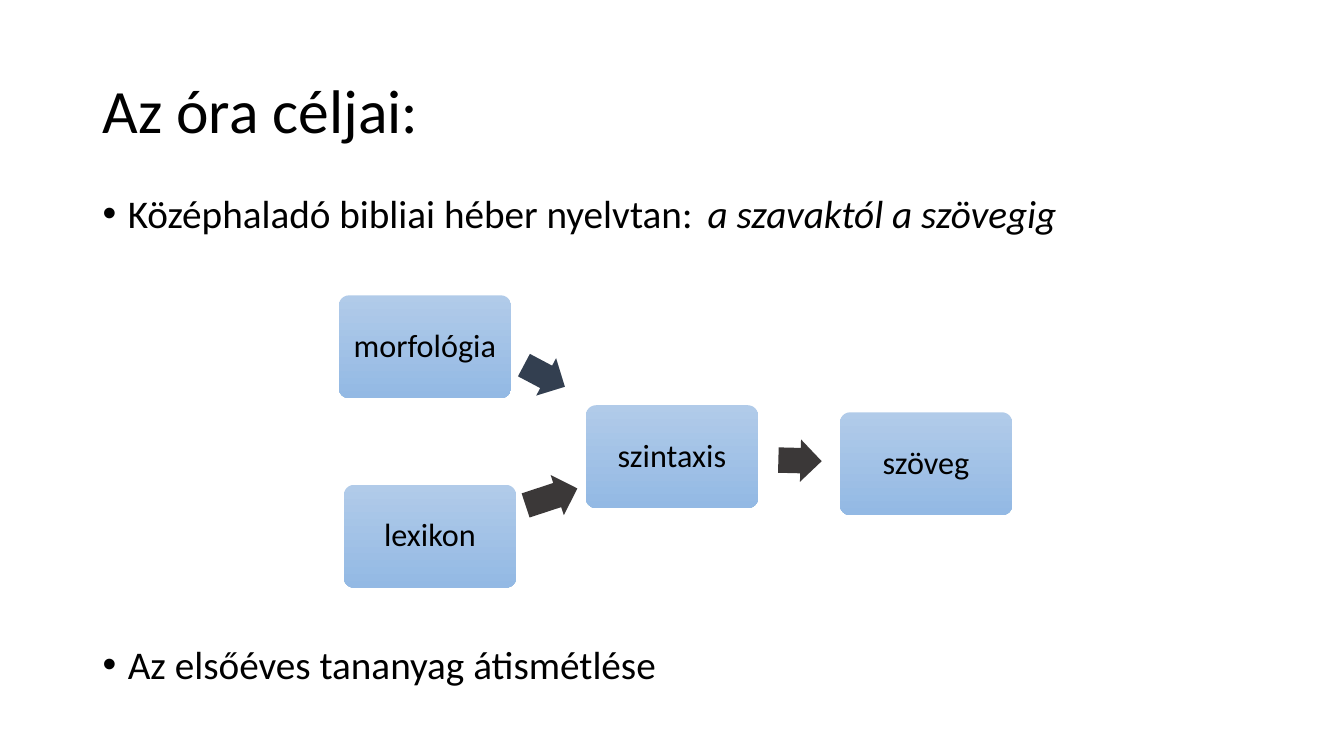
"""Build the slide on the aims of the Hebrew grammar course."""
import pptx
import pptx.dml.color
import pptx.enum.shapes
import pptx.enum.text
import pptx.oxml
import pptx.oxml.ns
import pptx.util

Inches = pptx.util.Inches
Pt = pptx.util.Pt
SHAPES = pptx.enum.shapes.MSO_SHAPE
ALIGN = pptx.enum.text.PP_ALIGN
MIDDLE = pptx.enum.text.MSO_ANCHOR.MIDDLE

BLACK = pptx.dml.color.RGBColor(0x00, 0x00, 0x00)
LIGHT_BLUE = pptx.dml.color.RGBColor(0xB1, 0xCB, 0xE9)
MID_BLUE = pptx.dml.color.RGBColor(0x93, 0xB9, 0xE4)
SLATE = pptx.dml.color.RGBColor(0x33, 0x3F, 0x50)
CHARCOAL = pptx.dml.color.RGBColor(0x3B, 0x38, 0x38)


def add_span(para, text, size, italic=False):
    span = para.add_run()
    span.text = text
    span.font.color.rgb = BLACK
    formats = {"name": "Calibri", "size": Pt(size), "italic": italic}
    for name, value in formats.items():
        setattr(span.font, name, value)


def add_preset(preset, left, top, width, height):
    shape = slide.shapes.add_shape(
        preset, Inches(left), Inches(top), Inches(width), Inches(height))
    shape.shadow.inherit = False
    shape.line.fill.background()
    return shape


deck = pptx.Presentation()
deck.slide_width = Inches(13.33)
deck.slide_height = Inches(7.5)
slide = deck.slides.add_slide(deck.slide_layouts[6])

title = slide.shapes.add_textbox(Inches(0.92), Inches(0.4), Inches(11.5), Inches(1.45))
title.text_frame.word_wrap = True
title.text_frame.vertical_anchor = MIDDLE
title_para = title.text_frame.paragraphs[0]
title_para.line_spacing = 0.9
add_span(title_para, "Az óra céljai:", 44)

body = slide.shapes.add_textbox(Inches(0.92), Inches(1.88), Inches(11.5), Inches(4.76))
body.text_frame.word_wrap = True
grammar_para = body.text_frame.paragraphs[0]
review_para = body.text_frame.add_paragraph()
for para, space_before in [(grammar_para, 0), (review_para, 292)]:
    para.line_spacing = 0.9
    para.space_before = Pt(space_before)
    properties = para._p.get_or_add_pPr()
    properties.set("marL", str(Inches(0.25)))
    properties.set("indent", str(Inches(-0.25)))
    namespace = pptx.oxml.ns.nsdecls("a")
    properties.append(pptx.oxml.parse_xml(f'<a:buFont {namespace} typeface="Arial"/>'))
    properties.append(pptx.oxml.parse_xml(f'<a:buChar {namespace} char="•"/>'))
add_span(grammar_para, "Középhaladó bibliai héber nyelvtan: \t", 28)
add_span(grammar_para, "a szavaktól a szövegig", 28, italic=True)
add_span(review_para, "Az elsőéves tananyag átismétlése", 28)

topics = [
    ("morfológia", 3.36, 2.93),
    ("lexikon", 3.41, 4.81),
    ("szintaxis", 5.81, 4.02),
    ("szöveg", 8.33, 4.09),
]
for topic, left, top in topics:
    box = add_preset(SHAPES.ROUNDED_RECTANGLE, left, top, 1.71, 1.02)
    box.adjustments[0] = 0.1
    box.fill.gradient()
    box.fill.gradient_angle = 270
    for stop, color in zip(box.fill.gradient_stops, [LIGHT_BLUE, MID_BLUE]):
        stop.color.rgb = color
    frame = box.text_frame
    frame_formats = {
        "word_wrap": True,
        "vertical_anchor": MIDDLE,
        "margin_left": Inches(0.05),
        "margin_right": Inches(0.05),
        "margin_top": Inches(0.1),
        "margin_bottom": Inches(0.1),
    }
    for name, value in frame_formats.items():
        setattr(frame, name, value)
    topic_para = frame.paragraphs[0]
    topic_para.alignment = ALIGN.CENTER
    topic_para.line_spacing = 0.9
    add_span(topic_para, topic, 23)

arrows = [
    (5.17, 3.52, 0.46, 27.9, SLATE),
    (5.2, 4.72, 0.54, 341.8, CHARCOAL),
    (7.72, 4.36, 0.43, 1.5, CHARCOAL),
]
for left, top, width, rotation, color in arrows:
    arrow = add_preset(SHAPES.RIGHT_ARROW, left, top, width, 0.42)
    arrow.adjustments[0] = 0.6
    arrow.adjustments[1] = 0.5
    arrow.rotation = rotation
    arrow.fill.solid()
    arrow.fill.fore_color.rgb = color

deck.save("out.pptx")
